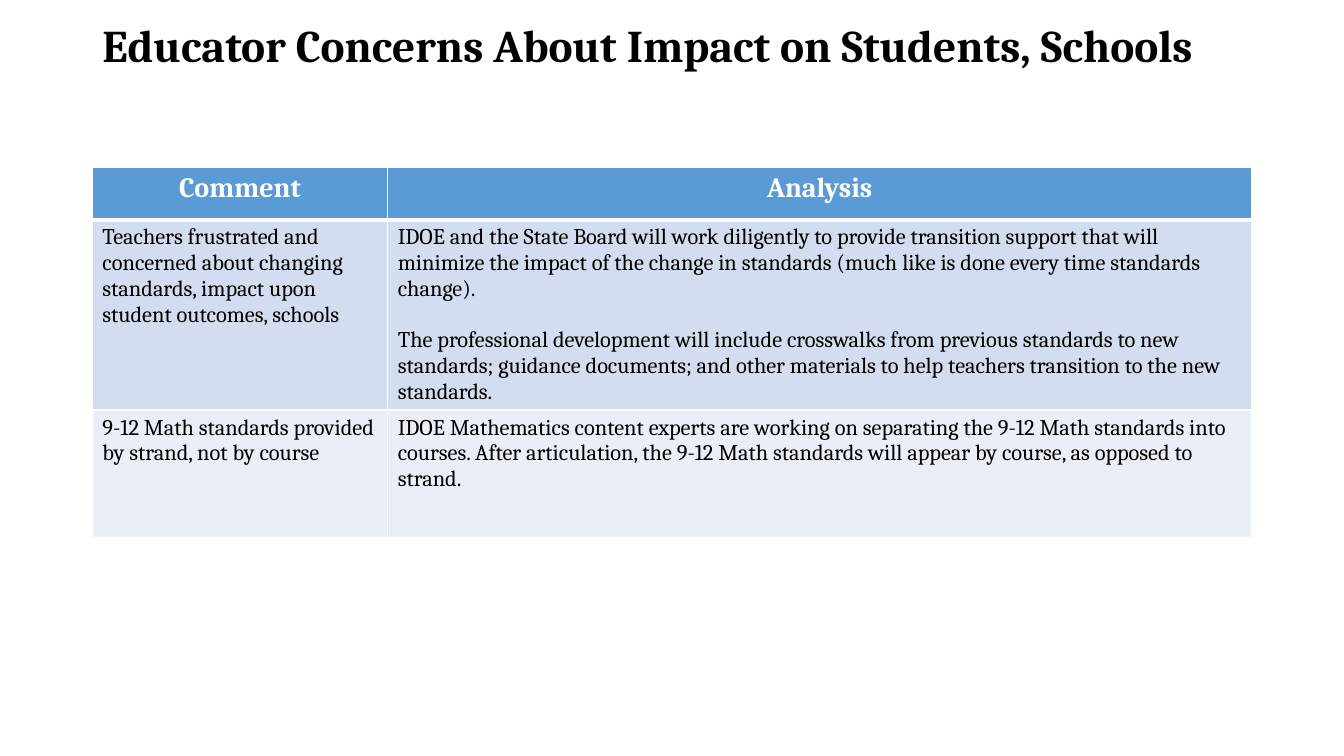
import pptx
import pptx.util
import pptx.dml.color
import pptx.enum.text
import pptx.oxml
import pptx.oxml.ns

Pt = pptx.util.Pt
Align = pptx.enum.text.PP_ALIGN
FONT = "Cambria"
HEADER = ["Comment", "Analysis"]
COMMENTS = [
    [
        ["Teachers frustrated and concerned about changing standards, impact upon student outcomes, schools"],
        [
            "IDOE and the State Board will work diligently to provide transition support that will minimize the impact of the change in standards (much like is done every time standards change).",
            "The professional development will include crosswalks from previous standards to new standards; guidance documents; and other materials to help teachers transition to the new standards.",
        ],
    ],
    [
        ["9-12 Math standards provided by strand, not by course"],
        ["IDOE Mathematics content experts are working on separating the 9-12 Math standards into courses. After articulation, the 9-12 Math standards will appear by course, as opposed to strand."],
    ],
]
COLUMN_WIDTHS = [211, 617]
ROW_HEIGHTS = [37.4, 135.7, 91.4]
BAND_FILLS = ["D2DEEF", "EAEFF7"]


def color(value):
    return pptx.dml.color.RGBColor.from_string(value)


def style_para(para, size, value, bold, align=Align.LEFT):
    para.alignment = align
    para.font.name = FONT
    para.font.size = Pt(size)
    para.font.bold = bold
    para.font.color.rgb = color(value)


def add_borders(cell, widths):
    properties = cell._tc.get_or_add_tcPr()
    namespace = pptx.oxml.ns.nsdecls("a")
    for position, (side, width) in enumerate(widths.items()):
        border = pptx.oxml.parse_xml(
            f'<a:ln{side} {namespace} w="{int(Pt(width))}"><a:solidFill>'
            f'<a:srgbClr val="FFFFFF"/></a:solidFill></a:ln{side}>'
        )
        properties.insert(position, border)


def fill_cell(cell, texts, fill, size, value, bold, align, top=1, bottom=1):
    cell.fill.solid()
    cell.fill.fore_color.rgb = color(fill)
    frame = cell.text_frame
    frame.text = "\n".join(texts)
    for number, para in enumerate(frame.paragraphs):
        style_para(para, size, value, bold, align)
        if number:
            para.space_before = Pt(18.5)
    add_borders(cell, {"L": 1, "R": 1, "T": top, "B": bottom})


def place_title(page, left, top, width, height):
    title = page.shapes.title
    title.left, title.top, title.width, title.height = map(Pt, (left, top, width, height))
    frame = title.text_frame
    frame.auto_size = pptx.enum.text.MSO_AUTO_SIZE.NONE
    frame.vertical_anchor = pptx.enum.text.MSO_ANCHOR.MIDDLE
    frame.text = "Educator Concerns About Impact on Students, Schools"
    para = frame.paragraphs[0]
    style_para(para, 32.4, "000000", True)
    para.line_spacing = 0.9


def place_table(page, left, top, width, height):
    box = map(Pt, (left, top, width, height))
    table = page.shapes.add_table(len(ROW_HEIGHTS), len(COLUMN_WIDTHS), *box).table
    for column, column_width in zip(table.columns, COLUMN_WIDTHS):
        column.width = Pt(column_width)
    for row, row_height in zip(table.rows, ROW_HEIGHTS):
        row.height = Pt(row_height)
    for column, heading in enumerate(HEADER):
        fill_cell(table.cell(0, column), [heading], "5B9BD5", 20, "FFFFFF", True, Align.CENTER, bottom=3)
    for row, (texts, fill) in enumerate(zip(COMMENTS, BAND_FILLS), 1):
        for column, paragraphs in enumerate(texts):
            fill_cell(table.cell(row, column), paragraphs, fill, 16, "000000", False,
                      Align.LEFT, top=3 if row == 1 else 1)


def build_concerns_page(deck):
    page = deck.slides.add_slide(deck.slide_layouts[5])
    page.background.fill.solid()
    page.background.fill.fore_color.rgb = color("FFFFFF")
    left, width = 66, sum(COLUMN_WIDTHS)
    place_title(page, left, 9.5, width, 50)
    place_table(page, left, 119.5, width, sum(ROW_HEIGHTS))


def main():
    deck = pptx.Presentation()
    deck.slide_width, deck.slide_height = Pt(960), Pt(540)
    build_concerns_page(deck)
    deck.save("out.pptx")


if __name__ == "__main__":
    main()
